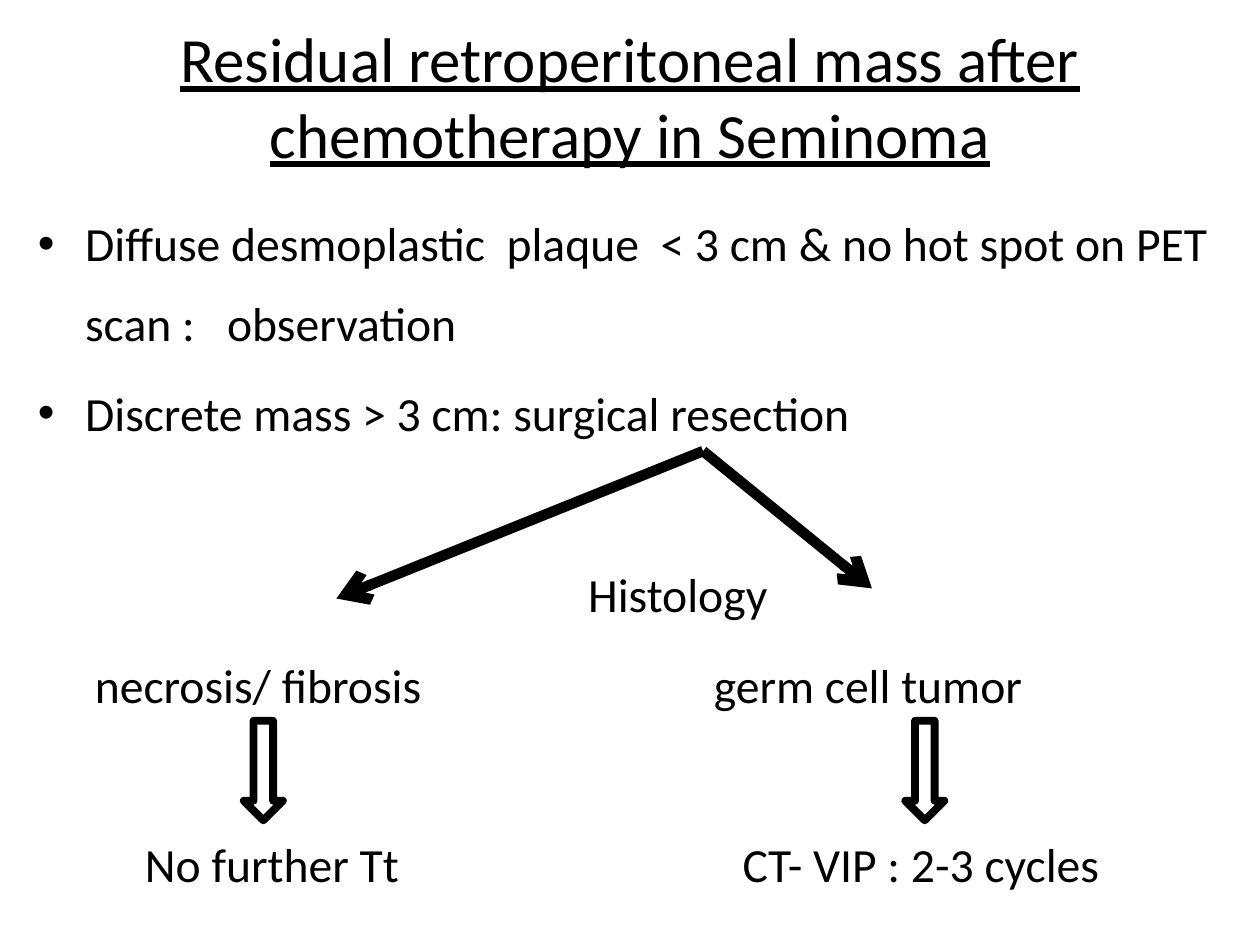
from lxml.etree import SubElement
from pptx import Presentation
from pptx.dml.color import RGBColor
from pptx.enum.shapes import MSO_CONNECTOR, MSO_SHAPE
from pptx.enum.text import MSO_ANCHOR, MSO_AUTO_SIZE, PP_ALIGN
from pptx.oxml.ns import qn
from pptx.util import Inches, Pt


def color(value):
    return RGBColor.from_string(value)


class SlideBuilder:
    """Places elements on a grid of 100 columns by 75 rows."""

    font = "Calibri"
    ink = "000000"
    title_size = 36
    body_size = 27.2

    def __init__(self, presentation):
        self.column = presentation.slide_width / 100
        self.row = presentation.slide_height / 75
        self.slide = presentation.slides.add_slide(presentation.slide_layouts[1])

    def place(self, columns, rows):
        return round(columns * self.column), round(rows * self.row)

    def box(self, left, top, width, height):
        return *self.place(left, top), *self.place(width, height)

    def move(self, shape, *area):
        shape.left, shape.top, shape.width, shape.height = self.box(*area)

    def format_runs(self, paragraph, size, underline=None):
        for run in paragraph.runs:
            run.font.name = self.font
            run.font.size = Pt(size)
            run.font.underline = underline
            run.font.color.rgb = color(self.ink)

    def title(self, text, *area):
        shape = self.slide.shapes.title
        self.move(shape, *area)
        frame = shape.text_frame
        frame.text = text
        frame.auto_size = MSO_AUTO_SIZE.NONE
        frame.vertical_anchor = MSO_ANCHOR.MIDDLE
        frame.paragraphs[0].alignment = PP_ALIGN.CENTER
        self.format_runs(frame.paragraphs[0], self.title_size, underline=True)

    def bullets(self, items, *area):
        shape = self.slide.placeholders[1]
        self.move(shape, *area)
        frame = shape.text_frame
        frame.text = "\n".join(items)
        frame.auto_size = MSO_AUTO_SIZE.NONE
        for paragraph in frame.paragraphs:
            paragraph.line_spacing = 1.4
            self.format_runs(paragraph, self.body_size)

    def label(self, text, center, middle, width=40, height=6):
        """Adds one line of text centred on a grid point."""
        area = self.box(center - width / 2, middle - height / 2, width, height)
        frame = self.slide.shapes.add_textbox(*area).text_frame
        frame.word_wrap = True
        frame.vertical_anchor = MSO_ANCHOR.MIDDLE
        frame.text = text
        frame.paragraphs[0].alignment = PP_ALIGN.CENTER
        self.format_runs(frame.paragraphs[0], self.body_size)

    def arrow(self, start, end):
        connector = self.slide.shapes.add_connector(
            MSO_CONNECTOR.STRAIGHT, *self.place(*start), *self.place(*end))
        connector.line.color.rgb = color(self.ink)
        connector.line.width = Pt(6)
        properties = connector._element.spPr
        SubElement(properties.find(qn("a:ln")), qn("a:tailEnd"), type="arrow")
        SubElement(properties, qn("a:effectLst"))

    def down_arrow(self, center, top, width=3.1, height=7.9):
        shape = self.slide.shapes.add_shape(
            MSO_SHAPE.DOWN_ARROW, *self.box(center - width / 2, top, width, height))
        shape.shadow.inherit = False
        shape.fill.background()
        shape.line.color.rgb = color(self.ink)
        shape.line.width = Pt(4.5)


def main():
    presentation = Presentation()
    presentation.slide_width = Inches(10)
    presentation.slide_height = Inches(7.5)
    builder = SlideBuilder(presentation)

    builder.title("Residual retroperitoneal mass after chemotherapy in Seminoma",
                  5, 1.3, 90, 12.5)
    builder.bullets(
        ["Diffuse desmoplastic  plaque  < 3 cm & no hot spot on PET scan :   observation",
         "Discrete mass > 3 cm: surgical resection"],
        2, 14.7, 98, 21.5)

    fork = (55.8, 35.8)
    for tip in ((69.2, 46.7), (26.7, 47.5)):
        builder.arrow(fork, tip)
    builder.label("Histology", 53.8, 47.1)

    branches = [
        ("necrosis/ fibrosis", 20.5, 20.9, "No further Tt", 21.6),
        ("germ cell tumor", 68.9, 73.4, "CT- VIP : 2-3 cycles", 73.1),
    ]
    for finding, finding_center, arrow_center, treatment, treatment_center in branches:
        builder.label(finding, finding_center, 54.3)
        builder.down_arrow(arrow_center, 57.2)
        builder.label(treatment, treatment_center, 68.5)

    presentation.save("out.pptx")


if __name__ == "__main__":
    main()
